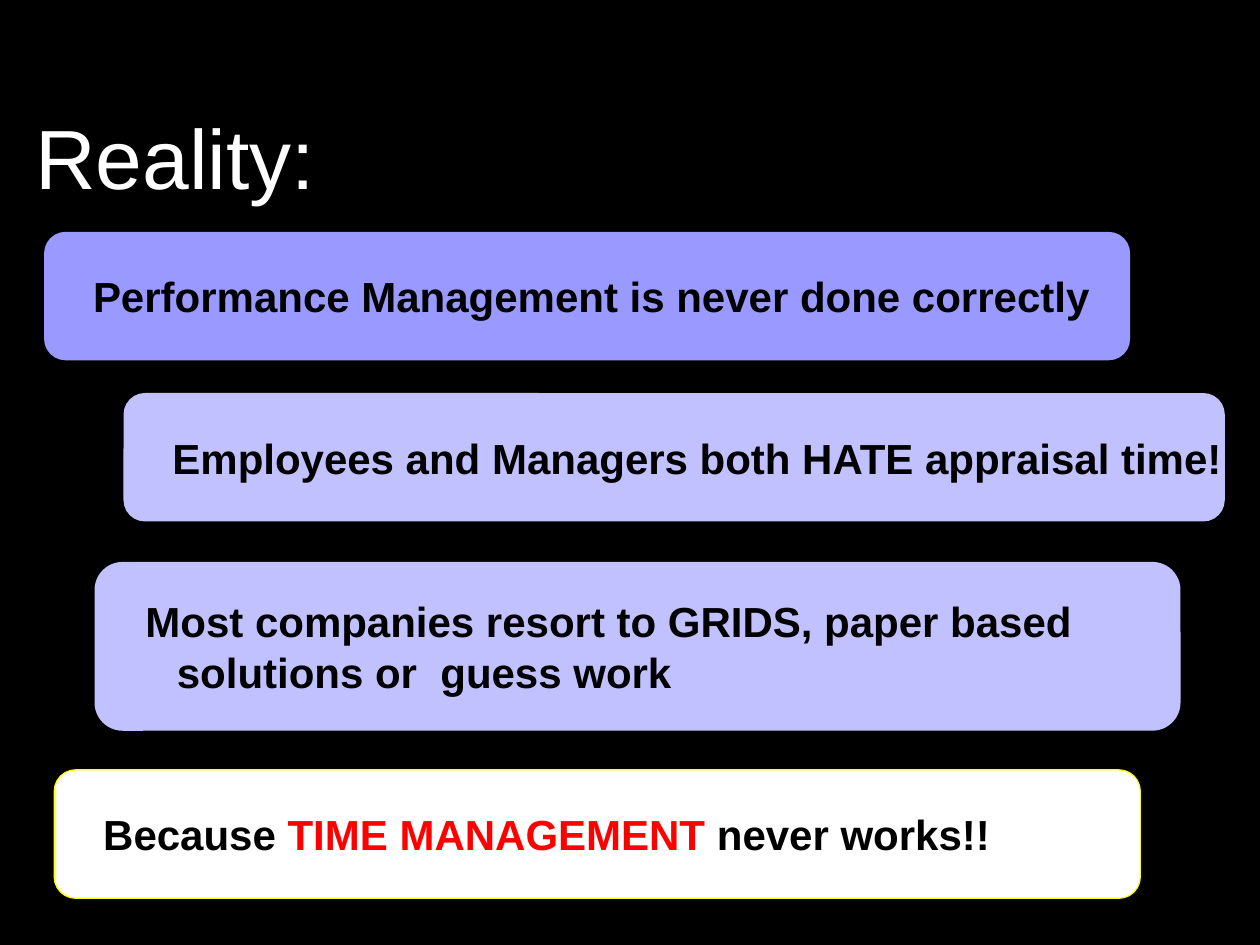
from pptx import Presentation
from pptx.dml.color import RGBColor
from pptx.enum.shapes import MSO_SHAPE
from pptx.enum.text import MSO_ANCHOR, PP_ALIGN
from pptx.util import Pt

FONT = "Arial"
COLORS = {
    "black": "000000",
    "white": "FFFFFF",
    "violet": "9999FF",
    "lilac": "C1C1FF",
    "yellow": "FFFF00",
    "red": "FF0000",
}

# Content: left, top, width, height, fill, line, wrap, (text, color) runs
TITLE = "Reality:"
STATEMENTS = [
    (25.2, 132.5, 620.6, 73.4, "violet", None, False,
     [("Performance Management is never done correctly", "black")]),
    (70.6, 224.6, 629.3, 73.4, "lilac", None, False,
     [("Employees and Managers both HATE appraisal time!", "black")]),
    (54, 321.1, 620.6, 96.5, "lilac", None, True,
     [("Most companies resort to GRIDS, paper based solutions or  guess work", "black")]),
    (31, 439.9, 620.6, 73.4, "white", "yellow", False,
     [("Because ", "black"), ("TIME MANAGEMENT ", "red"), ("never works!!", "black")]),
]


def color(name):
    return RGBColor.from_string(COLORS[name])


def format_paragraph(paragraph, left, hanging, before):
    paragraph.alignment = PP_ALIGN.LEFT
    paragraph.space_before = Pt(before)
    properties = paragraph._p.get_or_add_pPr()
    properties.set("marL", str(Pt(left)))
    properties.set("indent", str(Pt(-hanging)))


def add_run(paragraph, text, size, color_name, bold=False):
    run = paragraph.add_run()
    run.text = text
    run.font.name = FONT
    run.font.size = Pt(size)
    run.font.bold = bold
    run.font.color.rgb = color(color_name)


def add_title(slide):
    text_box = slide.shapes.add_textbox(Pt(20.2), Pt(60.5), Pt(643), Pt(30.2))
    frame = text_box.text_frame
    frame.word_wrap = True
    frame.margin_left = frame.margin_right = 0
    frame.margin_top = frame.margin_bottom = 0
    paragraph = frame.paragraphs[0]
    format_paragraph(paragraph, 18, 18, 5)
    add_run(paragraph, TITLE, 48, "white")


def add_statement(slide, left, top, width, height, fill, line, wrap, runs):
    shape = slide.shapes.add_shape(
        MSO_SHAPE.ROUNDED_RECTANGLE, Pt(left), Pt(top), Pt(width), Pt(height))
    shape.shadow.inherit = False
    shape.fill.solid()
    shape.fill.fore_color.rgb = color(fill)
    if line:
        shape.line.color.rgb = color(line)
        shape.line.width = Pt(0.75)
    else:
        shape.line.fill.background()
    frame = shape.text_frame
    frame.word_wrap = wrap
    frame.vertical_anchor = MSO_ANCHOR.MIDDLE
    paragraph = frame.paragraphs[0]
    paragraph.level = 1
    format_paragraph(paragraph, 35.3, 18, 6)
    for text, color_name in runs:
        add_run(paragraph, text, 24, color_name, bold=True)


def main():
    presentation = Presentation()
    presentation.slide_width, presentation.slide_height = Pt(720), Pt(540)
    slide = presentation.slides.add_slide(presentation.slide_layouts[6])

    # Background
    slide.background.fill.solid()
    slide.background.fill.fore_color.rgb = color("black")

    # Title and statements
    add_title(slide)
    for statement in STATEMENTS:
        add_statement(slide, *statement)

    presentation.save("out.pptx")


if __name__ == "__main__":
    main()
